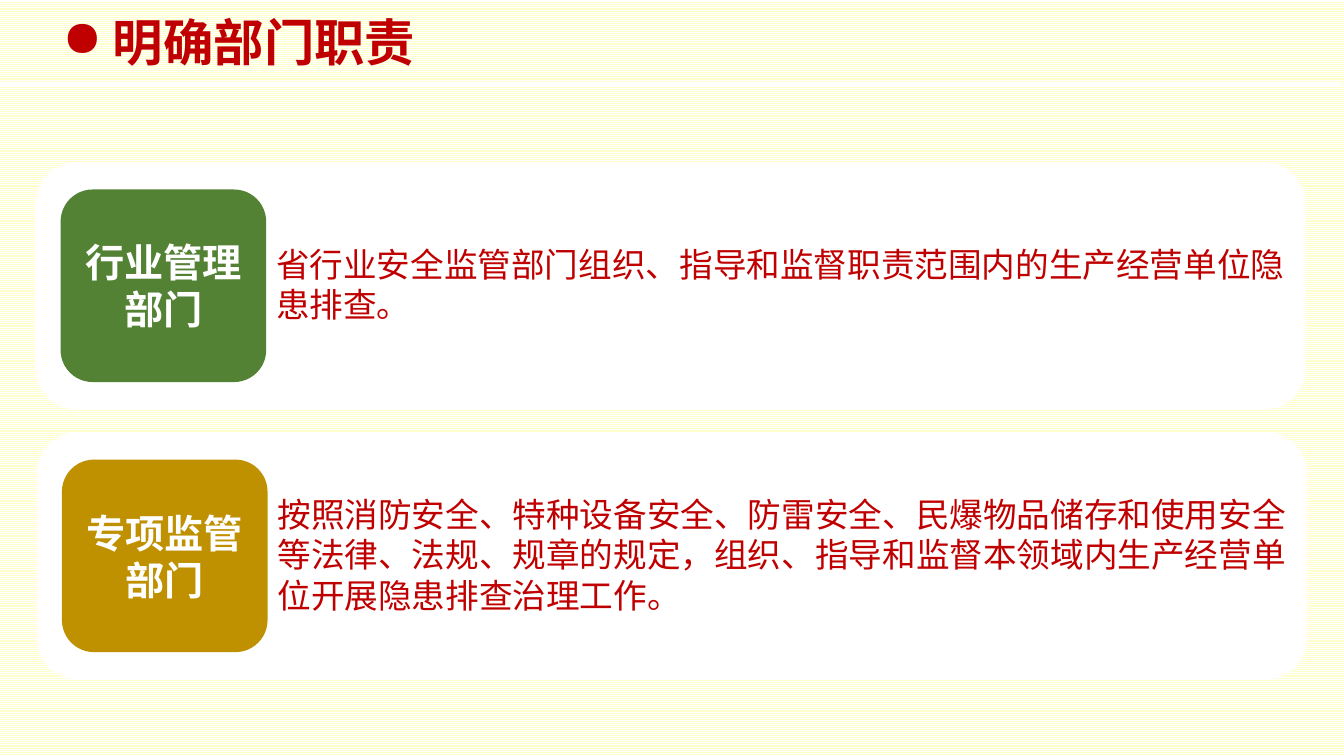
from dataclasses import dataclass

from lxml import etree
from pptx import Presentation
from pptx import util as u
from pptx.dml.color import RGBColor
from pptx.enum import dml, shapes, text
from pptx.oxml.ns import qn

WIDE, HIGH = u.Inches(13.33), u.Inches(7.5)
FACE = "Noto Sans CJK SC"
WHITE = RGBColor(0xFF, 0xFF, 0xFF)
CREAM = RGBColor(0xFF, 0xFF, 0xCC)
RED = RGBColor(0xC0, 0x00, 0x00)
GREEN = RGBColor(0x54, 0x82, 0x35)
GOLD = RGBColor(0xBF, 0x90, 0x00)

# All lengths are percent of the slide's width or height.
CARD_TOP, CARD_W, CARD_H, PITCH = 21.47, 94.52, 32.67, 35.73
BADGE_X, BADGE_W, BADGE_H = 1.88, 15.3, 25.47
TEXT_W, LINE_H, PAD_H = 77.34, 5.33, 1.77


@dataclass
class Box:
    left: float
    top: float
    width: float
    height: float

    def size(self) -> tuple:
        return (x(self.left), y(self.top), x(self.width), y(self.height))


@dataclass
class Duty:
    name: str
    task: str
    color: RGBColor
    left: float
    lines: int


DUTIES = [
    Duty("行业管理部门",
         "省行业安全监管部门组织、指导和监督职责范围内的生产经营单位隐患排查。",
         GREEN, 2.63, 2),
    Duty("专项监管部门",
         "按照消防安全、特种设备安全、防雷安全、民爆物品储存和使用安全等法律、法规、规章的规定，"
         "组织、指导和监督本领域内生产经营单位开展隐患排查治理工作。",
         GOLD, 2.73, 3),
]


def x(share: float) -> int:
    return round(WIDE * share / 100)


def y(share: float) -> int:
    return round(HIGH * share / 100)


def write(frame, words: str, size: int, color: RGBColor, bold: bool = False,
          align=text.PP_ALIGN.LEFT, bullet: str = "") -> None:
    """Fill the frame with one styled paragraph, bulleted if asked."""
    frame.word_wrap = True
    para = frame.paragraphs[0]
    para.text = words
    para.alignment = align
    props = para._p.get_or_add_pPr()
    if bullet:
        props.set("marL", str(u.Inches(0.5)))
        props.set("indent", str(-u.Inches(0.5)))
        etree.SubElement(props, qn("a:buChar")).set("char", bullet)
    font = para.font
    font.name, font.size, font.bold = FACE, u.Pt(size), bold
    font.color.rgb = color
    latin = props.find(qn("a:defRPr")).find(qn("a:latin"))
    east = etree.Element(qn("a:ea"))
    east.set("typeface", FACE)
    latin.addnext(east)


def add_round(slide, box: Box, color: RGBColor):
    shape = slide.shapes.add_shape(
        shapes.MSO_SHAPE.ROUNDED_RECTANGLE, *box.size())
    shape.shadow.inherit = False
    shape.fill.solid()
    shape.fill.fore_color.rgb = color
    shape.line.fill.background()
    return shape


def add_duty(slide, duty: Duty, row: int) -> None:
    """Draw a card with its badge and task, both centred on its height."""
    top = CARD_TOP + row * PITCH
    mid = top + CARD_H / 2
    add_round(slide, Box(duty.left, top, CARD_W, CARD_H), WHITE)

    left = duty.left + BADGE_X
    badge = add_round(
        slide, Box(left, mid - BADGE_H / 2, BADGE_W, BADGE_H), duty.color)
    badge.text_frame.vertical_anchor = text.MSO_ANCHOR.MIDDLE
    write(badge.text_frame, duty.name, 28, WHITE, True, text.PP_ALIGN.CENTER)

    high = PAD_H + LINE_H * duty.lines
    area = Box(left + BADGE_W, mid - high / 2, TEXT_W, high)
    frame = slide.shapes.add_textbox(*area.size()).text_frame
    write(frame, duty.task, 24, RED)
    frame.auto_size = text.MSO_AUTO_SIZE.SHAPE_TO_FIT_TEXT


def add_title(slide, words: str) -> None:
    title = slide.shapes.title
    title.left, title.top, title.width, title.height = Box(
        3.9, 0.8, 46.06, 9.47).size()
    frame = title.text_frame
    frame.vertical_anchor = text.MSO_ANCHOR.TOP
    write(frame, words, 36, RED, True, bullet="●")
    frame.auto_size = text.MSO_AUTO_SIZE.SHAPE_TO_FIT_TEXT


def add_rule(slide) -> None:
    rule = slide.shapes.add_connector(
        shapes.MSO_CONNECTOR.STRAIGHT, 0, y(11.2), x(99.8), y(11.2))
    rule.line.color.rgb = WHITE
    rule.line.width = u.Pt(3)
    etree.SubElement(rule._element.spPr, qn("a:effectLst"))


def main() -> None:
    deck = Presentation()
    deck.slide_width, deck.slide_height = WIDE, HIGH
    slide = deck.slides.add_slide(deck.slide_layouts.get_by_name("Title Only"))
    fill = slide.background.fill
    fill.patterned()
    fill.pattern = dml.MSO_PATTERN.LIGHT_HORIZONTAL
    fill.fore_color.rgb = CREAM
    fill.back_color.rgb = WHITE

    add_title(slide, "明确部门职责")
    add_rule(slide)
    for row, duty in enumerate(DUTIES):
        add_duty(slide, duty, row)
    deck.save("out.pptx")


if __name__ == "__main__":
    main()
